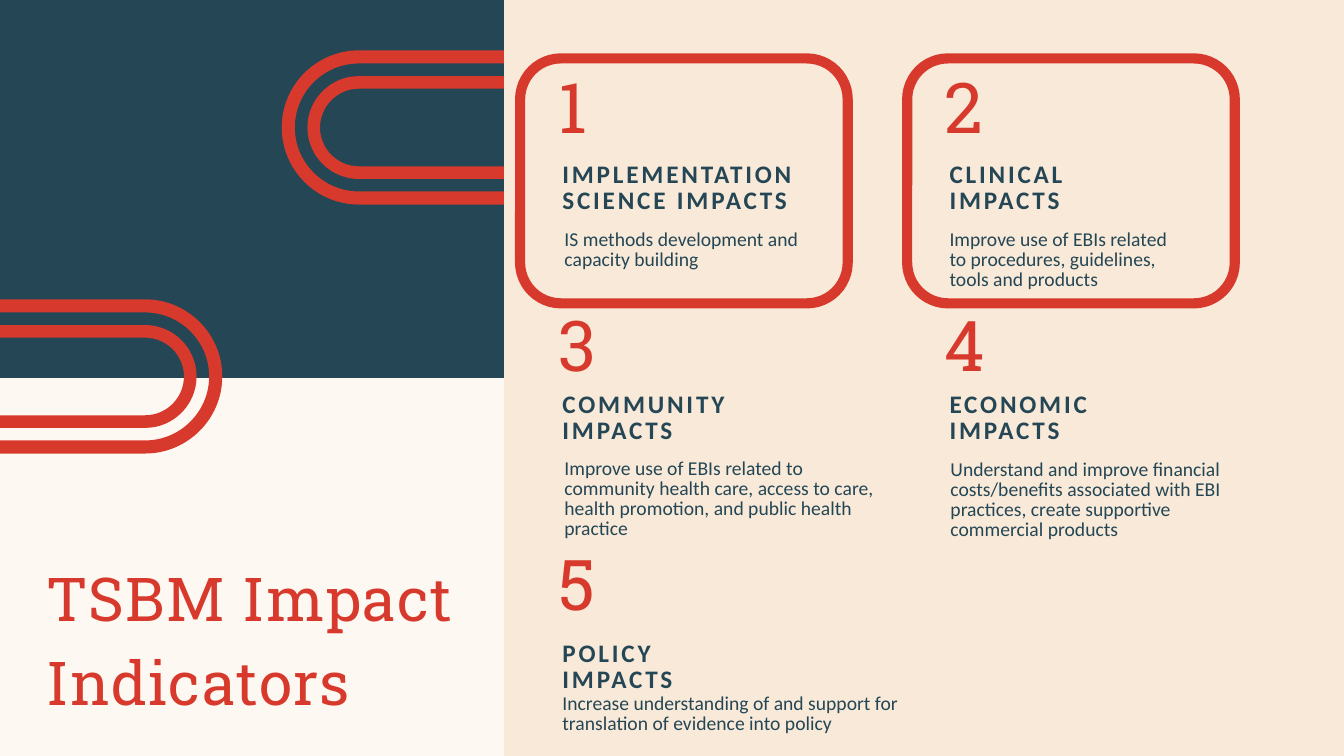
from pptx import Presentation
from pptx.dml.color import RGBColor
from pptx.enum import shapes, text
from pptx.oxml.ns import qn
from pptx.util import Inches, Pt
from lxml import etree

RED = RGBColor(0xD7, 0x3A, 0x2C)
NAVY = RGBColor(0x24, 0x46, 0x55)
CREAM = RGBColor(0xFE, 0xF8, 0xF2)
SAND = RGBColor(0xF8, 0xE9, 0xD8)

NUMBER = dict(size=Pt(50), name="Roboto Slab", color=RED)
HEADING = dict(size=Pt(18), name="Calibri", color=NAVY, bold=True, spacing=2)
BODY = dict(size=Pt(14), name="Calibri", color=NAVY)
TITLE = dict(size=Pt(43.2), name="Roboto Slab", color=RED, spacing=1)

prs = Presentation()
prs.slide_width, prs.slide_height = Inches(40 / 3), Inches(7.5)
s = prs.slides.add_slide(prs.slide_layouts[6])
s.background.fill.solid()
s.background.fill.fore_color.rgb = SAND


def add_text(box, words, style, line_spacing=0.85, space_after=6, anchor=text.MSO_ANCHOR.TOP):
    tf = s.shapes.add_textbox(*[Inches(v) for v in box]).text_frame
    frame = dict(word_wrap=True, vertical_anchor=anchor,
                 margin_left=Inches(0.13), margin_right=Inches(0.13),
                 margin_top=Inches(0.07), margin_bottom=Inches(0.07))
    for key, value in frame.items():
        setattr(tf, key, value)
    p = tf.paragraphs[0]
    p.line_spacing = line_spacing
    p.space_after = Pt(space_after)
    r = p.add_run()
    r.text = words
    for key, value in style.items():
        if key == "color":
            r.font.color.rgb = value
        elif key == "spacing":
            r.font._element.set("spc", str(value * 100))
        else:
            setattr(r.font, key, value)


def paint(sp, color):
    sp.shadow.inherit = False
    sp.fill.solid()
    sp.fill.fore_color.rgb = color
    sp.line.fill.background()


for height, color in [(7.5, CREAM), (3.75, NAVY)]:
    paint(s.shapes.add_shape(shapes.MSO_SHAPE.RECTANGLE, 0, 0, Inches(5), Inches(height)), color)

HALF_TURN = [(0.55, -1), (1, -0.55), (1, 0), (1, 0.55), (0.55, 1), (0, 1)]
for cx, cy, edge, side in [(1.44, 3.735, 0, 1), (3.56, 1.265, 5, -1)]:
    group = s.shapes.add_group_shape()
    for outer, inner in [(0.765, 0.635), (0.51, 0.385)]:
        points = [(cx, cy - outer), (edge, cy - outer), (edge, cy - inner), (cx, cy - inner)]
        points += [(cx + side * inner * dx, cy + inner * dy) for dx, dy in HALF_TURN]
        points += [(edge, cy + inner), (edge, cy + outer), (cx, cy + outer)]
        points += [(cx + side * outer * dx, cy - outer * dy) for dx, dy in HALF_TURN]
        points = [(Inches(x), Inches(y)) for x, y in points]
        fb = group.shapes.build_freeform(*points[0])
        fb.add_line_segments(points[1:], close=True)
        sp = fb.convert_to_shape()
        paint(sp, RED)
        outline = sp._element.find(".//" + qn("a:path"))
        lines = outline.findall(qn("a:lnTo"))
        for first in (3, 6, 12, 15):
            curve = etree.Element(qn("a:cubicBezTo"))
            lines[first].addprevious(curve)
            for line in lines[first:first + 3]:
                curve.append(line[0])
                outline.remove(line)

add_text((0.33, 5, 4.33, 2.19), "TSBM Impact Indicators", TITLE, Pt(60), 0, text.MSO_ANCHOR.BOTTOM)

impacts = [
    (5.41, 0.69, "IMPLEMENTATION SCIENCE IMPACTS", (5.45, 1.55, 2.96, 0.37),
     "IS methods development and capacity building", (5.47, 2.22, 2.61, 0.58)),
    (9.24, 0.69, "CLINICAL IMPACTS", (9.29, 1.55, 2.12, 0.37),
     "Improve use of EBIs related to procedures, guidelines, tools and products",
     (9.29, 2.22, 2.45, 0.75)),
    (5.41, 3.05, "COMMUNITY IMPACTS", (5.45, 3.83, 2.12, 0.61),
     "Improve use of EBIs related to community health care, access to care, "
     "health promotion, and public health practice", (5.47, 4.49, 3.36, 0.92)),
    (9.24, 3.05, "ECONOMIC IMPACTS", (9.29, 3.83, 2.12, 0.37),
     "Understand and improve financial costs/benefits associated with EBI practices, "
     "create supportive commercial products", (9.3, 4.5, 3.36, 0.92)),
    (5.41, 5.42, "POLICY IMPACTS", (5.45, 6.3, 2.12, 0.37),
     "Increase understanding of and support for translation of evidence into policy",
     (5.45, 6.82, 3.63, 0.58)),
]
for number, (x, y, heading, heading_box, body, body_box) in enumerate(impacts, 1):
    add_text((x, y, 1.17, 0.81), str(number), NUMBER)
    add_text(heading_box, heading, HEADING)
    add_text(body_box, body, BODY)

for x in (5.16, 9):
    sp = s.shapes.add_shape(shapes.MSO_SHAPE.ROUNDED_RECTANGLE,
                            Inches(x), Inches(0.58), Inches(3.25), Inches(2.43))
    sp.shadow.inherit = False
    sp.fill.background()
    sp.line.color.rgb = RED
    sp.line.width = Pt(7.25)

prs.save("out.pptx")
